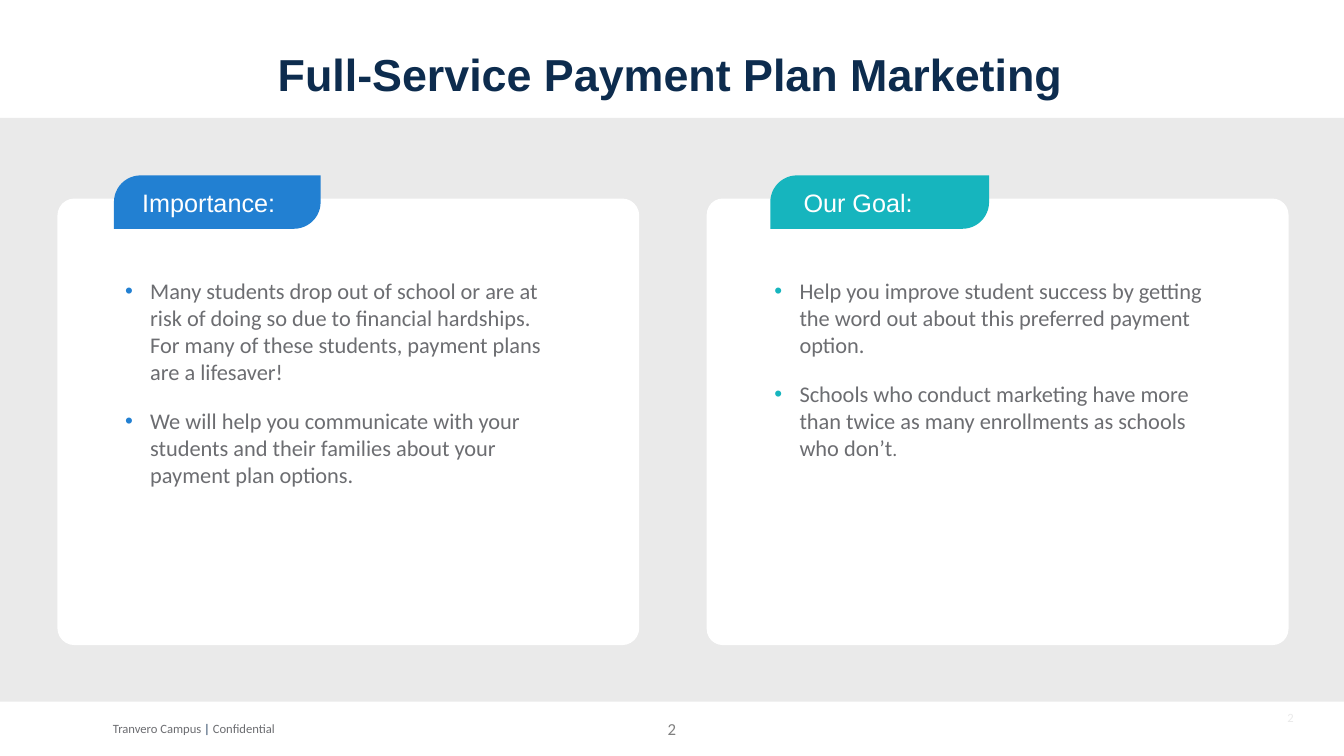
from dataclasses import dataclass

from lxml.etree import SubElement
from pptx import Presentation
from pptx.dml.color import RGBColor
from pptx.enum.shapes import MSO_SHAPE
from pptx.enum.text import MSO_ANCHOR, PP_ALIGN
from pptx.oxml.ns import qn
from pptx.util import Inches, Pt


@dataclass(frozen=True)
class Theme:
    heading_font: str = "Arial"
    body_font: str = "Calibri"
    navy: str = "0D2C4E"
    blue: str = "2280D2"
    teal: str = "16B5BE"
    body: str = "6C6D71"
    number: str = "808080"
    band: str = "EAEAEA"
    white: str = "FFFFFF"
    title_size: int = 32
    label_size: int = 18
    body_size: int = 16
    stop_size: int = 14
    number_size: int = 12
    small_size: int = 9


T = Theme()


@dataclass(frozen=True)
class Run:
    text: str
    size: int = T.body_size
    color: str = T.body
    font: str = T.body_font
    bold: bool = False


@dataclass(frozen=True)
class Box:
    left: float
    top: float
    width: float
    height: float

    def emu(self) -> list:
        return [Inches(v) for v in (self.left, self.top, self.width, self.height)]


@dataclass(frozen=True)
class Panel:
    label: str
    color: str
    card_left: float
    corner: float
    tab_left: float
    tab_width: float
    label_left: float
    text_left: float
    text_width: float
    bullets: list[list[Run]]


PANELS = [
    Panel("Importance:", T.blue, 0.57, 0.038, 1.13, 2.05, 1.41, 1.24, 4.4, [
        [Run("Many students drop out of school or are at risk of doing so due to "
             "financial hardships. For many of these students, payment plans are "
             "a lifesaver!")],
        [Run("We will help you communicate with your students and their families "
             "about your payment plan options.")],
    ]),
    Panel("Our Goal:", T.teal, 7.01, 0.036, 7.64, 2.17, 7.97, 7.68, 4.48, [
        [Run("Help you improve student success by getting the word out about this "
             "preferred payment option.")],
        [Run("Schools who conduct marketing have more than twice as many "
             "enrollments as schools who don’t"), Run(".", T.stop_size)],
    ]),
]


def add_block(s, kind: MSO_SHAPE, box: Box, color: str, adjust: tuple = ()) -> None:
    sp = s.shapes.add_shape(kind, *box.emu())
    sp.shadow.inherit = False
    sp.fill.solid()
    sp.fill.fore_color.rgb = RGBColor.from_string(color)
    sp.line.fill.background()
    for i, value in enumerate(adjust):
        sp.adjustments[i] = value


def add_bullet(p, color: str) -> None:
    """Give the paragraph a coloured bullet with a hanging indent."""
    pPr = p._p.get_or_add_pPr()
    pPr.set("marL", str(Inches(0.25)))
    pPr.set("indent", str(Inches(-0.25)))
    clr = SubElement(pPr, qn("a:buClr"))
    SubElement(clr, qn("a:srgbClr"), val=color)
    SubElement(pPr, qn("a:buFont"), typeface=T.heading_font)
    SubElement(pPr, qn("a:buChar"), char="•")


def add_text(s, box: Box, paragraphs: list[list[Run]], *, inset: float = 0,
             margin: float = 0.05, align=PP_ALIGN.LEFT, anchor=MSO_ANCHOR.TOP,
             line: float | None = None, before: int = 0, after: int = 0,
             bullet: str | None = None) -> None:
    tf = s.shapes.add_textbox(*box.emu()).text_frame
    tf.word_wrap = True
    tf.vertical_anchor = anchor
    tf.margin_left, tf.margin_right = Inches(inset), Inches(0.1)
    tf.margin_top = tf.margin_bottom = Inches(margin)
    for i, runs in enumerate(paragraphs):
        p = tf.add_paragraph() if i else tf.paragraphs[0]
        p.alignment = align
        p.line_spacing = line
        p.space_before, p.space_after = Pt(before), Pt(after)
        if bullet:
            add_bullet(p, bullet)
        for run in runs:
            r = p.add_run()
            r.text = run.text
            r.font.name, r.font.size, r.font.bold = run.font, Pt(run.size), run.bold
            r.font.color.rgb = RGBColor.from_string(run.color)


def add_panel(s, panel: Panel) -> None:
    add_block(s, MSO_SHAPE.ROUNDED_RECTANGLE, Box(panel.card_left, 1.97, 5.77, 4.43),
              T.white, (panel.corner,))
    add_text(s, Box(panel.text_left, 2.7, panel.text_width, 3.56), panel.bullets,
             before=10, after=6, bullet=panel.color)
    add_block(s, MSO_SHAPE.ROUND_2_DIAG_RECTANGLE,
              Box(panel.tab_left, 1.74, panel.tab_width, 0.53), panel.color, (0.5, 0))
    add_text(s, Box(panel.label_left, 1.84, 1.96, 0.46),
             [[Run(panel.label, T.label_size, T.white, T.heading_font)]],
             line=0.9, before=10)


def main() -> None:
    prs = Presentation()
    prs.slide_width, prs.slide_height = Inches(13.33), Inches(7.5)
    s = prs.slides.add_slide(prs.slide_layouts[6])

    add_block(s, MSO_SHAPE.RECTANGLE, Box(0, 1.17, 13.33, 5.79), T.band)
    add_text(s, Box(0.46, 0.47, 12.38, 0.62),
             [[Run("Full-Service Payment Plan Marketing", T.title_size, T.navy,
                   T.heading_font, True)]],
             inset=0.1, align=PP_ALIGN.CENTER, line=0.9, before=10)
    for panel in PANELS:
        add_panel(s, panel)

    add_text(s, Box(1.12, 7.1, 4.46, 0.25),
             [[Run("Tranvero Campus ", T.small_size), Run("| ", T.small_size, T.navy),
               Run("Confidential", T.small_size)]])
    add_text(s, Box(0, 6.98, 13.33, 0.51), [[Run("2", T.number_size, T.number)]],
             inset=0.1, margin=0, align=PP_ALIGN.CENTER, anchor=MSO_ANCHOR.MIDDLE)
    add_text(s, Box(12.43, 6.99, 0.5, 0.26), [[Run("2", T.small_size, T.band)]],
             margin=0, align=PP_ALIGN.RIGHT, anchor=MSO_ANCHOR.MIDDLE)
    prs.save("out.pptx")


if __name__ == "__main__":
    main()
